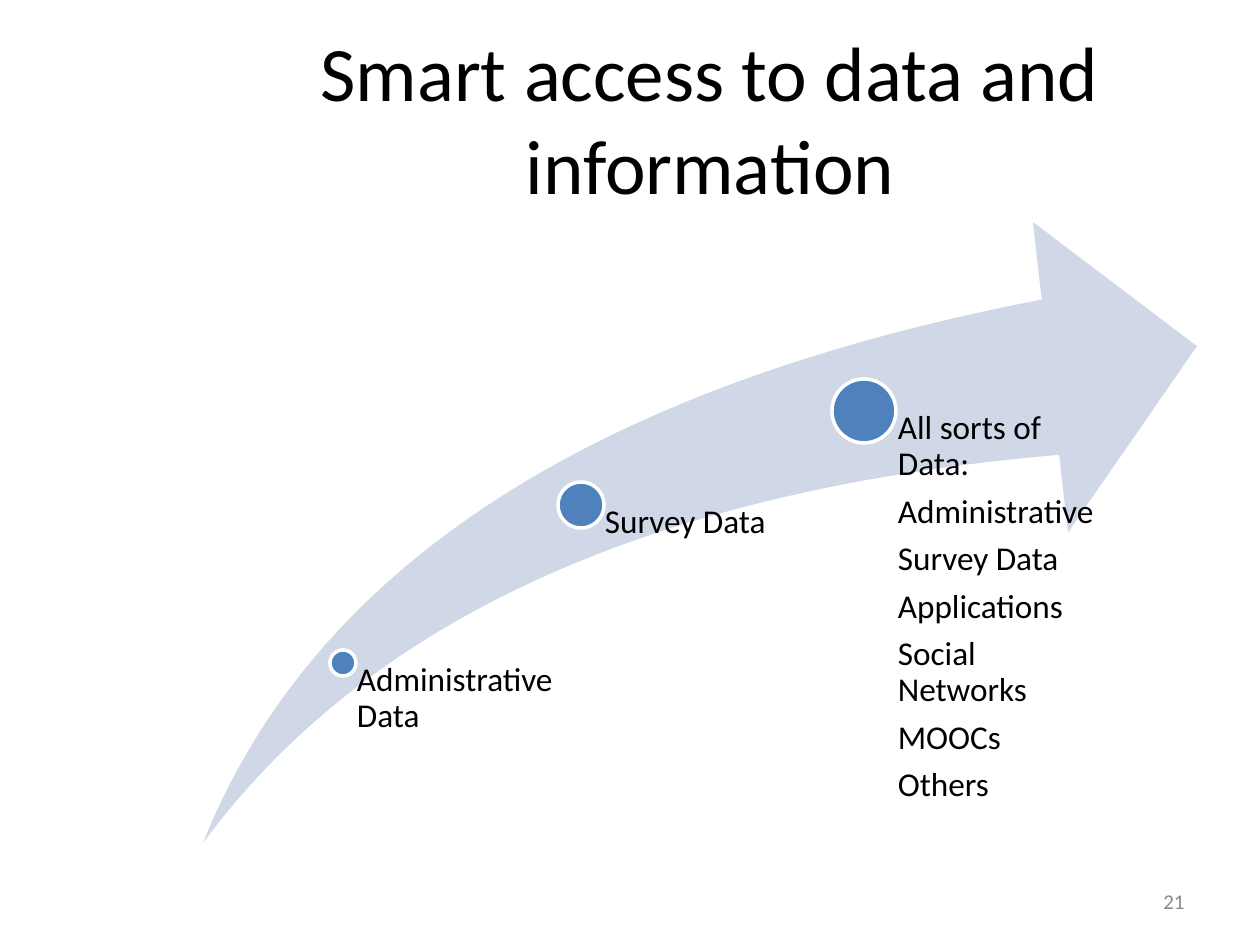
from collections import namedtuple
from dataclasses import dataclass

from pptx import Presentation
from pptx.dml.color import RGBColor
from pptx.enum.shapes import MSO_SHAPE
from pptx.enum.text import MSO_ANCHOR, PP_ALIGN
from pptx.util import Emu, Pt

Box = namedtuple("Box", "left top width height")
Step = namedtuple("Step", "x y radius label_width lines")


@dataclass(frozen=True)
class Theme:
    font: str = "Calibri"
    ink: str = "000000"
    muted: str = "898989"
    swoosh: str = "D0D8E8"
    dot: str = "4F81BD"
    outline: str = "FFFFFF"
    title_size: int = 44
    label_size: int = 19
    number_size: int = 12


THEME = Theme()
PX_PER_INCH = 126
SLIDE = Box(0, 0, 1260, 945)
TITLE = Box(223, 38, 974, 158)
SWOOSH = Box(203, 222, 994, 621)
NUMBER = Box(903, 876, 294, 50)

# Dot centres are measured from the corner of the swoosh box.
STEPS = [
    Step(140, 441, 13, 232, ["Administrative Data"]),
    Step(378, 283, 23, 238, ["Survey Data"]),
    Step(661, 189, 32, 238, [
        "All sorts of Data:", "Administrative", "Survey Data", "Applications",
        "Social Networks", "MOOCs", "Others",
    ]),
]


def px(length):
    return Emu(round(length * 914400 / PX_PER_INCH))


def place(box):
    return [px(length) for length in box]


def add_text_frame(page, box, anchor):
    frame = page.shapes.add_textbox(*place(box)).text_frame
    frame.word_wrap = True
    frame.vertical_anchor = anchor
    return frame


def add_span(para, text, size, color):
    span = para.add_run()
    span.text = text
    span.font.name = THEME.font
    span.font.size = Pt(size)
    span.font.color.rgb = RGBColor.from_string(color)


def add_filled_shape(page, kind, box, color):
    shape = page.shapes.add_shape(kind, *place(box))
    shape.shadow.inherit = False
    shape.fill.solid()
    shape.fill.fore_color.rgb = RGBColor.from_string(color)
    shape.line.fill.background()
    return shape


def add_line_of_text(page, box, text, size, color, align):
    """Add one vertically centred paragraph, such as the title."""
    para = add_text_frame(page, box, MSO_ANCHOR.MIDDLE).paragraphs[0]
    para.alignment = align
    add_span(para, text, size, color)


def add_step(page, area, step):
    """Add a dot and its label, which hangs from the dot's centre to the area's foot."""
    x, y = area.left + step.x, area.top + step.y
    diameter = 2 * step.radius
    dot = add_filled_shape(
        page, MSO_SHAPE.OVAL,
        Box(x - step.radius, y - step.radius, diameter, diameter), THEME.dot)
    dot.line.color.rgb = RGBColor.from_string(THEME.outline)
    dot.line.width = Pt(2)

    label = Box(x, y, step.label_width, area.height - step.y)
    frame = add_text_frame(page, label, MSO_ANCHOR.TOP)
    frame.margin_left = px(round(step.radius * 1.06))
    frame.margin_top = frame.margin_right = frame.margin_bottom = 0
    for index, line in enumerate(step.lines):
        para = frame.add_paragraph() if index else frame.paragraphs[0]
        para.line_spacing = 0.9
        para.space_after = Pt(THEME.label_size * 0.35)
        add_span(para, line, THEME.label_size, THEME.ink)


def add_swoosh_diagram(page, area, steps):
    arrow = add_filled_shape(page, MSO_SHAPE.SWOOSH_ARROW, area, THEME.swoosh)
    for index in range(2):
        arrow.adjustments[index] = 0.25
    for step in steps:
        add_step(page, area, step)


def main():
    deck = Presentation()
    deck.slide_width, deck.slide_height = px(SLIDE.width), px(SLIDE.height)
    page = deck.slides.add_slide(deck.slide_layouts[6])
    add_line_of_text(page, TITLE, "Smart access to data and information",
                     THEME.title_size, THEME.ink, PP_ALIGN.CENTER)
    add_swoosh_diagram(page, SWOOSH, STEPS)
    add_line_of_text(page, NUMBER, "21", THEME.number_size, THEME.muted, PP_ALIGN.RIGHT)
    deck.save("out.pptx")


if __name__ == "__main__":
    main()
